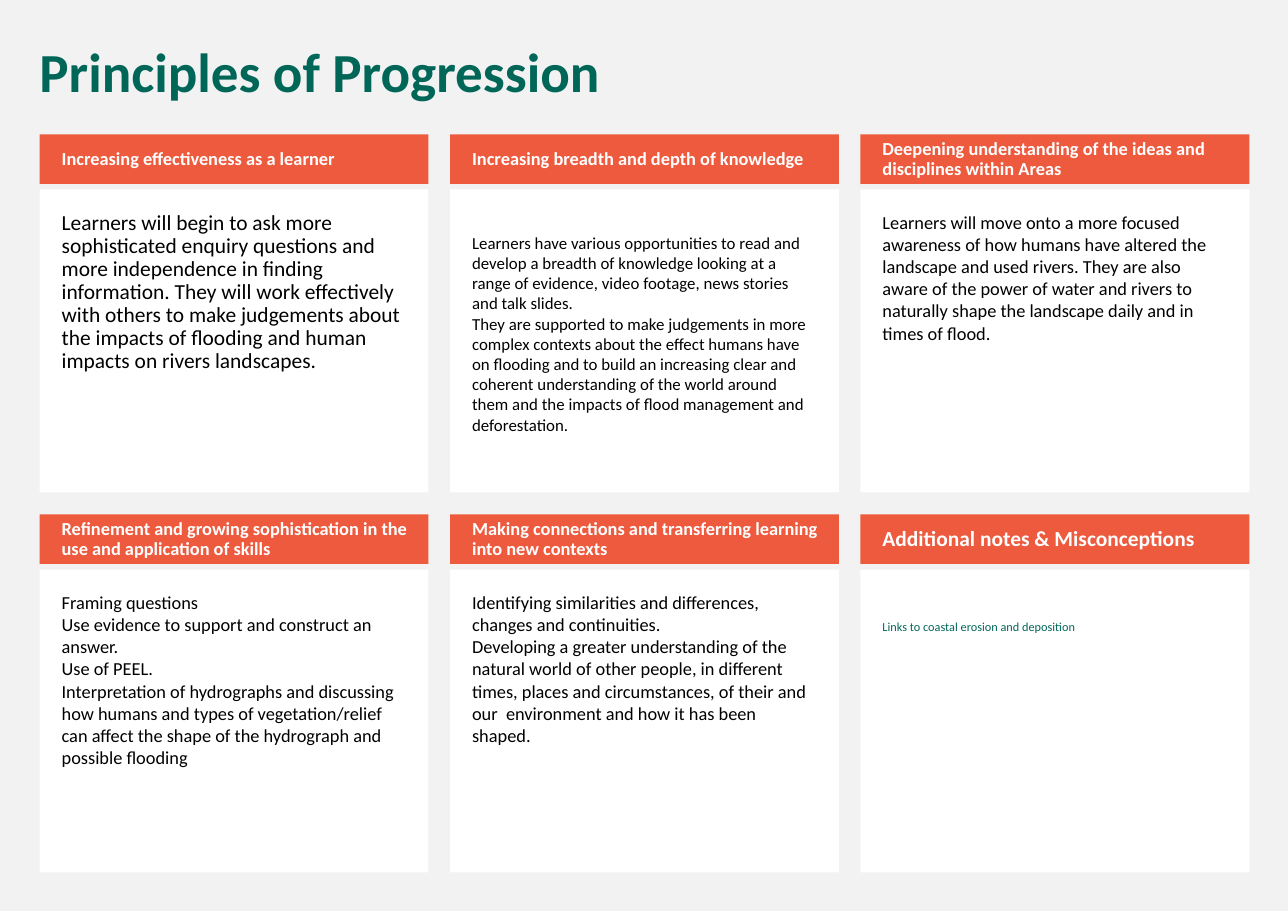
"""Build the Principles of Progression slide: a title above a grid of six headed cards."""
from pptx import Presentation
from pptx import util as u
from pptx.dml import color
from pptx.enum import shapes, text

FONT = "Calibri"
GREEN, ORANGE, WHITE, BLACK, GREY = "006758", "ED5A3E", "FFFFFF", "000000", "F2F2F2"

TITLE = "Principles of Progression"
CARDS = [
    {"heading": "Increasing effectiveness as a learner", "size": 14, "spacing": 0.9,
     "body": ["Learners will begin to ask more sophisticated enquiry questions and more independence in "
              "finding information. They will work effectively with others to make judgements about "
              "the impacts of flooding and human impacts on rivers landscapes."]},
    {"heading": "Increasing breadth and depth of knowledge", "size": 11, "inset": 0.39,
     "body": ["Learners have various opportunities to read and develop a breadth of knowledge looking "
              "at a range of evidence, video footage, news stories and talk slides.",
              "They are supported to make judgements in more complex contexts about the effect humans "
              "have on flooding and to build an increasing clear and coherent understanding of the "
              "world around them and the impacts of flood management and deforestation."]},
    {"heading": "Deepening understanding of the ideas and disciplines within Areas",
     "body": ["Learners will move onto a more focused awareness of how humans have altered the "
              "landscape and used rivers. They are also aware of the power of water and rivers to "
              "naturally shape the landscape daily and in times of flood."]},
    {"heading": "Refinement and growing sophistication in the use and application of skills",
     "body": ["Framing questions",
              "Use evidence to support and construct an answer.",
              "Use of PEEL.",
              "Interpretation of hydrographs and discussing how humans and types of "
              "vegetation/relief can affect the shape of the hydrograph and possible flooding"]},
    {"heading": "Making connections and transferring learning into new contexts",
     "body": ["Identifying similarities and differences, changes and continuities.",
              "Developing a greater understanding of the natural world of other people, in different "
              "times, places and circumstances, of their and our  environment and how it has been "
              "shaped."]},
    {"heading": "Additional notes & Misconceptions", "heading_size": 14,
     "size": 8, "color": GREEN, "spacing": 0.9, "inset": 0.47,
     "body": ["Links to coastal erosion and deposition"]},
]

COLUMNS = 3
LEFT, RIGHT, TOP = 0.36, 11.34, 1.22
CARD_WIDTH, HEADING_HEIGHT, BODY_HEIGHT = 3.53, 0.45, 2.75
BODY_OFFSET, ROW_PITCH = 0.5, 3.45
COLUMN_PITCH = (RIGHT - LEFT - CARD_WIDTH) / (COLUMNS - 1)


def rgb(value):
    return color.RGBColor.from_string(value)


def write(shape, lines, size, ink, bold=False, spacing=1.0,
          insets=(0.1, 0.05, 0.1, 0.05), anchor=text.MSO_ANCHOR.TOP):
    frame = shape.text_frame
    frame.word_wrap = True
    frame.vertical_anchor = anchor
    frame.margin_left, frame.margin_top, frame.margin_right, frame.margin_bottom = map(u.Inches, insets)
    for index, line in enumerate(lines):
        paragraph = frame.add_paragraph() if index else frame.paragraphs[0]
        paragraph.alignment = text.PP_ALIGN.LEFT
        paragraph.line_spacing = spacing
        run = paragraph.add_run()
        run.text = line
        run.font.name, run.font.size, run.font.bold = FONT, u.Pt(size), bold
        run.font.color.rgb = rgb(ink)


def add_panel(slide, left, top, height, fill):
    shape = slide.shapes.add_shape(shapes.MSO_SHAPE.RECTANGLE, u.Inches(left), u.Inches(top),
                                   u.Inches(CARD_WIDTH), u.Inches(height))
    shape.shadow.inherit = False
    shape.fill.solid()
    shape.fill.fore_color.rgb = rgb(fill)
    shape.line.fill.background()
    return shape


def add_card(slide, index, card):
    row, column = divmod(index, COLUMNS)
    left, top = LEFT + column * COLUMN_PITCH, TOP + row * ROW_PITCH
    body = add_panel(slide, left, top + BODY_OFFSET, BODY_HEIGHT, WHITE)
    write(body, card["body"], card.get("size", 12), card.get("color", BLACK),
          spacing=card.get("spacing", 1.0), insets=(0.2, card.get("inset", 0.2), 0.2, 0.2))
    heading = add_panel(slide, left, top, HEADING_HEIGHT, ORANGE)
    write(heading, [card["heading"]], card.get("heading_size", 12), WHITE, bold=True, spacing=0.9,
          insets=(0.2, 0.05, 0.1, 0.05), anchor=text.MSO_ANCHOR.MIDDLE)


def main():
    presentation = Presentation()
    presentation.slide_width, presentation.slide_height = u.Inches(11.69), u.Inches(8.27)
    slide = presentation.slides.add_slide(presentation.slide_layouts[6])
    slide.background.fill.solid()
    slide.background.fill.fore_color.rgb = rgb(GREY)
    title = slide.shapes.add_textbox(u.Inches(0.26), u.Inches(0.36), u.Inches(11.08), u.Inches(0.65))
    write(title, [TITLE], 36, GREEN, bold=True, spacing=0.9)
    for index, card in enumerate(CARDS):
        add_card(slide, index, card)
    presentation.save("out.pptx")


if __name__ == "__main__":
    main()
